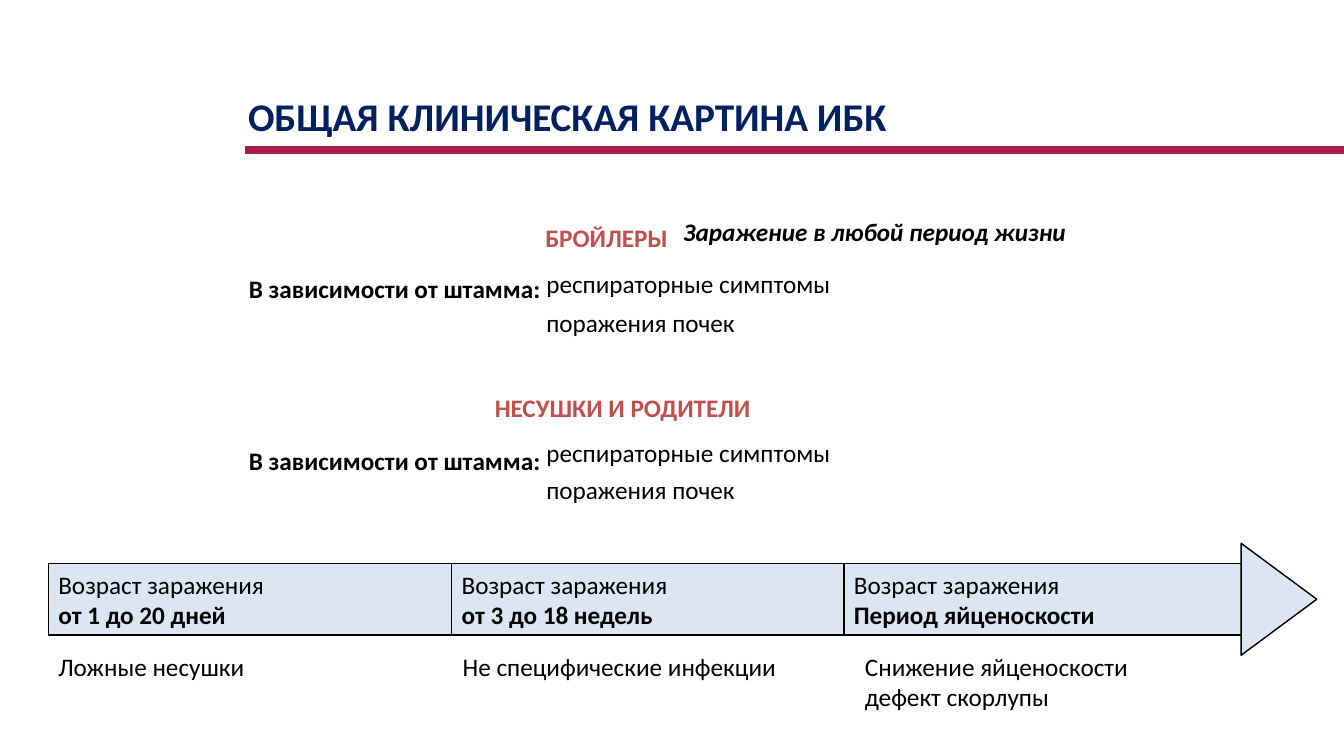
from collections import namedtuple

from lxml.etree import SubElement
from pptx import Presentation
from pptx.dml.color import RGBColor
from pptx.enum.shapes import MSO_CONNECTOR, MSO_SHAPE
from pptx.enum.text import MSO_ANCHOR, PP_ALIGN
from pptx.oxml.ns import qn
from pptx.util import Inches, Pt

Box = namedtuple("Box", "left top width height")

SLIDE_WIDTH, SLIDE_HEIGHT = Inches(13.33), Inches(7.5)
COLUMN, ROW = SLIDE_WIDTH / 133.3, SLIDE_HEIGHT / 75

NAVY, CRIMSON, RED = "002060", "A81D47", "C0504D"
BLACK, PALE_BLUE = "000000", "DCE6F2"

BODY = {"name": "Calibri", "size": Pt(18)}
BOLD = {**BODY, "bold": True}
BOLD_ITALIC = {**BOLD, "italic": True}
TITLE = {**BOLD, "size": Pt(28)}

STAGES = [
    (0, "от 1 до 20 дней", 0, 33.3, ["Ложные несушки"]),
    (40, "от 3 до 18 недель", 40.1, 36.5, ["Не специфические инфекции"]),
    (78.9, "Период яйценоскости", 80, 40.1, ["Снижение яйценоскости ", "дефект скорлупы"]),
]


def color(hex_string):
    return RGBColor.from_string(hex_string)


def place(box):
    return (round(box.left * COLUMN), round(box.top * ROW),
            round(box.width * COLUMN), round(box.height * ROW))


def inside(box, left, top, width, height):
    return Box(box.left + left, box.top + top, width, height)


def write_lines(paragraph, lines, ink=BLACK):
    for index, (text, font_format) in enumerate(lines):
        if index:
            paragraph.add_line_break()
        run = paragraph.add_run()
        run.text = text
        run.font.color.rgb = color(ink)
        for name, value in font_format.items():
            setattr(run.font, name, value)


def add_text(slide, box, lines, ink=BLACK, wrap=False, **paragraph_format):
    frame = slide.shapes.add_textbox(*place(box)).text_frame
    frame.word_wrap = wrap
    paragraph = frame.paragraphs[0]
    for name, value in paragraph_format.items():
        setattr(paragraph, name, value)
    write_lines(paragraph, lines, ink)


def add_block(slide, kind, box):
    shape = slide.shapes.add_shape(kind, *place(box))
    shape.shadow.inherit = False
    shape.fill.solid()
    shape.fill.fore_color.rgb = color(PALE_BLUE)
    shape.line.color.rgb = color(BLACK)
    shape.line.width = Pt(1)
    return shape


def add_header(slide, box):
    left, top, width, height = place(box)
    rule = slide.shapes.add_connector(
        MSO_CONNECTOR.STRAIGHT, left, top + height, left + width, top + height)
    rule.line.color.rgb = color(CRIMSON)
    rule.line.width = Pt(6)
    SubElement(rule._element.spPr, qn("a:effectLst"))
    add_text(slide, inside(box, -1.1, 0, 66.1, 5.7),
             [("ОБЩАЯ КЛИНИЧЕСКАЯ КАРТИНА ИБК", TITLE)], NAVY,
             alignment=PP_ALIGN.CENTER)


def add_symptoms(slide, box, first_row, row_step):
    add_text(slide, inside(box, 0, 0, 32.9, 5.6),
             [("В зависимости от штамма:", BOLD)], wrap=True, line_spacing=1.5)
    symptoms = [("респираторные симптомы", 30.5), ("поражения почек", 20.9)]
    for index, (symptom, width) in enumerate(symptoms):
        add_text(slide, inside(box, 29.5, first_row + index * row_step, width, 4),
                 [(symptom, BODY)])


def add_broilers(slide, box):
    add_text(slide, inside(box, 29.4, 0, 14.3, 5.1),
             [("БРОЙЛЕРЫ", BOLD)], RED, line_spacing=1.5)
    add_text(slide, inside(box, 43.1, 0.9, 40.3, 4),
             [("Заражение в любой период жизни", BOLD_ITALIC)])
    add_symptoms(slide, inside(box, 0, 5, box.width, box.height - 5), 1, 3.9)


def add_layers(slide, box):
    add_text(slide, inside(box, 24.4, 0, 27.7, 4),
             [("НЕСУШКИ И РОДИТЕЛИ", BOLD)], RED)
    add_symptoms(slide, inside(box, 0, 3.8, box.width, box.height - 3.8), 0.7, 3.7)


def add_timeline(slide, box):
    for left, age, note_left, note_width, notes in STAGES:
        stage = add_block(slide, MSO_SHAPE.RECTANGLE, inside(box, left, 0, 41.1, 7.1))
        frame = stage.text_frame
        frame.word_wrap = True
        frame.vertical_anchor = MSO_ANCHOR.MIDDLE
        frame.paragraphs[0].alignment = PP_ALIGN.LEFT
        write_lines(frame.paragraphs[0], [("Возраст заражения ", BODY), (age, BOLD)])
        add_text(slide, inside(box, note_left, 8.2, note_width, 4 + 3.1 * (len(notes) - 1)),
                 [(note, BODY) for note in notes], wrap=True)
    arrowhead = add_block(slide, MSO_SHAPE.ISOSCELES_TRIANGLE,
                          inside(box, 116.5, -0.2, 11.1, 7.5))
    arrowhead.rotation = 90


def main():
    presentation = Presentation()
    presentation.slide_width, presentation.slide_height = SLIDE_WIDTH, SLIDE_HEIGHT
    slide = presentation.slides.add_slide(presentation.slide_layouts[6])
    add_header(slide, Box(24.3, 8.7, 109, 6.2))
    add_broilers(slide, Box(23.7, 20.1, 83.4, 13.9))
    add_layers(slide, Box(23.7, 38.4, 60, 12.2))
    add_timeline(slide, Box(4.8, 55.9, 127.6, 15.3))
    presentation.save("out.pptx")


if __name__ == "__main__":
    main()
